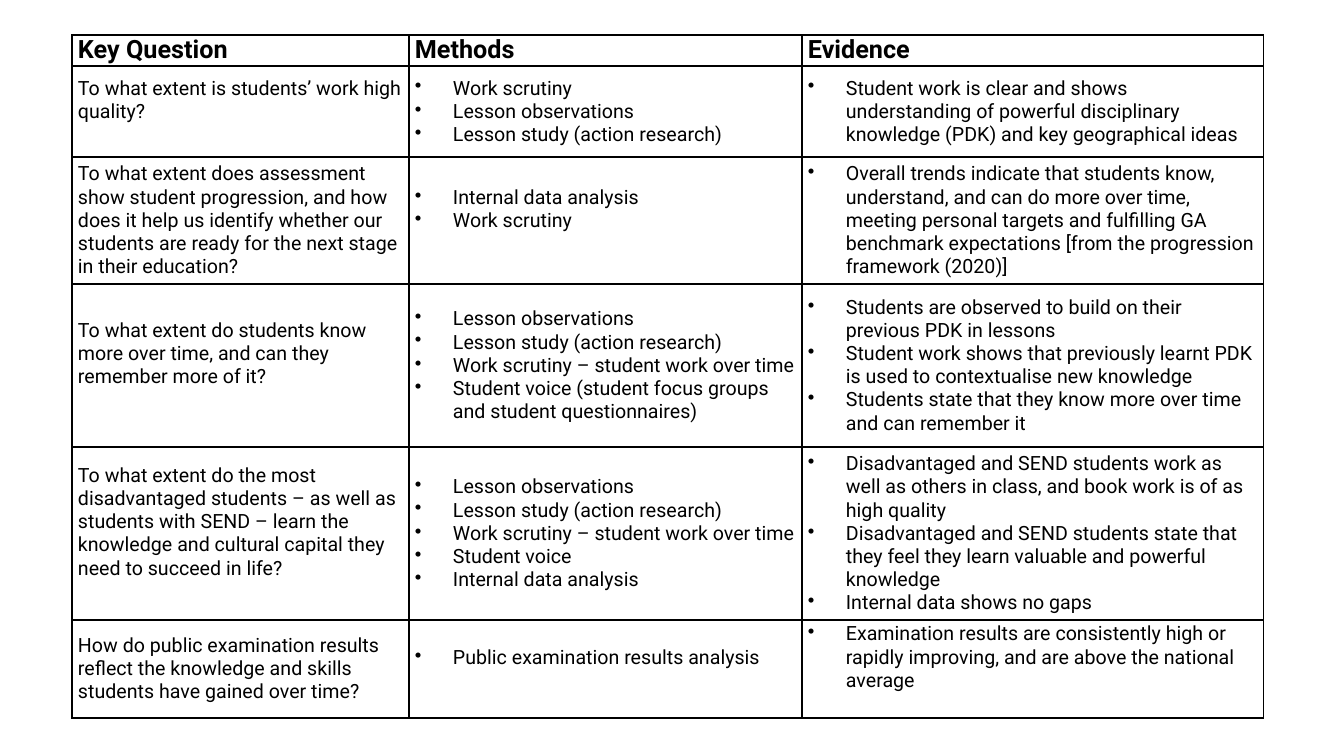
import pptx
import pptx.dml.color
import pptx.enum.text
import pptx.oxml
import pptx.oxml.ns
import pptx.util

EMU_PER_PX = 914400 / 100.8

HEADINGS = ["Key Question", "Methods", "Evidence"]
COLUMN_WIDTHS = [337, 393, 462]
ROW_HEIGHTS = [31, 91, 127, 163, 173, 98]

# Each row: question, methods, evidence
REVIEW_ROWS = [
    ("To what extent is students’ work high quality?",
     ["Work scrutiny", "Lesson observations", "Lesson study (action research)"],
     ["Student work is clear and shows understanding of powerful disciplinary "
      "knowledge (PDK) and key geographical ideas"]),
    ("To what extent does assessment show student progression, and how does it help us "
     "identify whether our students are ready for the next stage in their education?",
     ["Internal data analysis", "Work scrutiny"],
     ["Overall trends indicate that students know, understand, and can do more over time, "
      "meeting personal targets and fulfilling GA benchmark expectations "
      "[from the progression framework (2020)]"]),
    ("To what extent do students know more over time, and can they remember more of it?",
     ["Lesson observations", "Lesson study (action research)",
      "Work scrutiny – student work over time",
      "Student voice (student focus groups and student questionnaires)"],
     ["Students are observed to build on their previous PDK in lessons",
      "Student work shows that previously learnt PDK is used to contextualise new knowledge",
      "Students state that they know more over time and can remember it"]),
    ("To what extent do the most disadvantaged students – as well as students with SEND – "
     "learn the knowledge and cultural capital they need to succeed in life?",
     ["Lesson observations", "Lesson study (action research)",
      "Work scrutiny – student work over time", "Student voice", "Internal data analysis"],
     ["Disadvantaged and SEND students work as well as others in class, "
      "and book work is of as high quality",
      "Disadvantaged and SEND students state that they feel they learn "
      "valuable and powerful knowledge",
      "Internal data shows no gaps"]),
    ("How do public examination results reflect the knowledge and skills "
     "students have gained over time?",
     ["Public examination results analysis"],
     ["Examination results are consistently high or rapidly improving, "
      "and are above the national average"]),
]

# Cells (row, column) whose text sits one line higher than centred
RAISED_CELLS = {(1, 0), (2, 1), (3, 0), (4, 0), (5, 1), (5, 2)}
LINE_HEIGHT = 23


def px(length):
    return pptx.util.Emu(round(length * EMU_PER_PX))


def colour(value):
    return pptx.dml.color.RGBColor.from_string(value)


class SlideBuilder:
    font = "Roboto"
    ink = "000000"
    heading_size = 18
    body_size = 14
    border_width = 1
    cell_inset = 6
    bullet_indent = 38

    def __init__(self, slide):
        self.slide = slide

    def table(self, left, top, column_widths, row_heights):
        frame = self.slide.shapes.add_table(
            len(row_heights), len(column_widths), px(left), px(top),
            px(sum(column_widths)), px(sum(row_heights)))
        table = frame.table
        table.first_row = False
        table.horz_banding = False
        for column, width in zip(table.columns, column_widths):
            column.width = px(width)
        for row, height in zip(table.rows, row_heights):
            row.height = px(height)
        return table

    def cell(self, cell, texts, heading=False, bulleted=False, space_below=0):
        self.borders(cell)
        cell.fill.background()
        cell.margin_left = cell.margin_right = px(self.cell_inset)
        cell.margin_top = 0
        cell.margin_bottom = px(space_below)
        anchors = pptx.enum.text.MSO_ANCHOR
        cell.vertical_anchor = anchors.TOP if heading else anchors.MIDDLE
        for index, text in enumerate(texts):
            frame = cell.text_frame
            para = frame.add_paragraph() if index else frame.paragraphs[0]
            if bulleted:
                self.bullet(para)
            span = para.add_run()
            span.text = text
            span.font.name = self.font
            span.font.size = pptx.util.Pt(self.heading_size if heading else self.body_size)
            span.font.bold = heading
            span.font.color.rgb = colour(self.ink)

    def bullet(self, para):
        properties = para._p.get_or_add_pPr()
        properties.set("marL", str(px(self.bullet_indent)))
        properties.set("indent", str(-px(self.bullet_indent)))
        mark = pptx.oxml.parse_xml(
            f'<a:buChar {pptx.oxml.ns.nsdecls("a")} char="•"/>')
        properties.append(mark)

    def borders(self, cell):
        properties = cell._tc.get_or_add_tcPr()
        for side in ("lnL", "lnR", "lnT", "lnB"):
            properties.append(pptx.oxml.parse_xml(
                f'<a:{side} {pptx.oxml.ns.nsdecls("a")} '
                f'w="{pptx.util.Pt(self.border_width)}"><a:solidFill>'
                f'<a:srgbClr val="{self.ink}"/></a:solidFill></a:{side}>'))


def main():
    deck = pptx.Presentation()
    deck.slide_width, deck.slide_height = px(1344), px(756)
    page = SlideBuilder(deck.slides.add_slide(deck.slide_layouts[6]))
    table = page.table(72, 35, COLUMN_WIDTHS, ROW_HEIGHTS)

    # Heading row
    for column, heading in enumerate(HEADINGS):
        page.cell(table.cell(0, column), [heading], heading=True)

    # Questions with their bulleted methods and evidence
    for row, (question, methods, evidence) in enumerate(REVIEW_ROWS, start=1):
        for column, texts in enumerate([[question], methods, evidence]):
            space_below = LINE_HEIGHT if (row, column) in RAISED_CELLS else 0
            page.cell(table.cell(row, column), texts,
                      bulleted=column > 0, space_below=space_below)

    deck.save("out.pptx")


if __name__ == "__main__":
    main()
